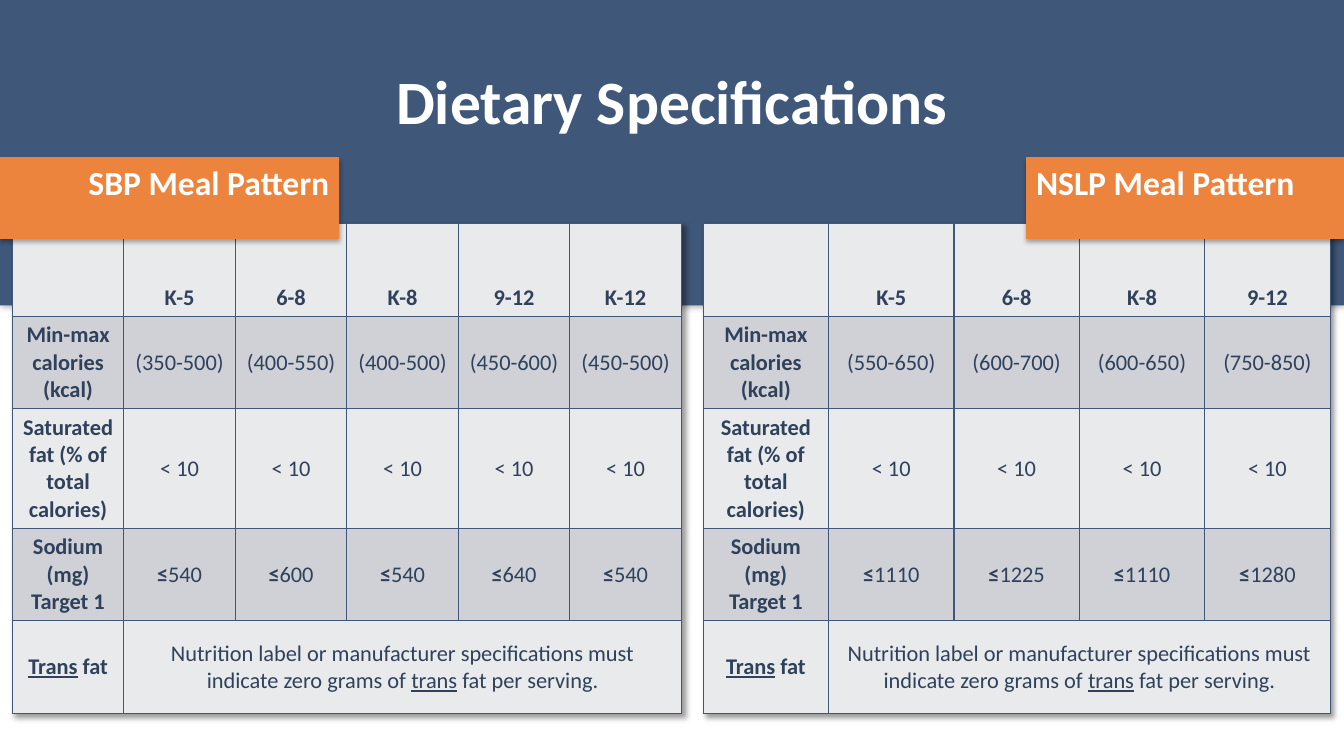
from lxml import etree
from pptx import Presentation
from pptx.dml.color import RGBColor
from pptx.enum import shapes, text
from pptx.oxml import ns
from pptx.util import Cm, Pt

FONT = "Calibri"
NAVY, ORANGE, WHITE, INK = "3F5779", "EC843E", "FFFFFF", "2F415B"
BAND_FILLS = ["E8EAEC", "CFD1D7"]
ROW_HEIGHTS = [2.33, 2.33, 3.0, 2.33, 2.33]
SLIDE_WIDTH = 33.87


def colour(value):
    return RGBColor.from_string(value)


def style(font, size, value, bold=None):
    font.name, font.size, font.bold = FONT, Pt(size), bold
    font.color.rgb = colour(value)


def child(parent, tag, **attributes):
    return etree.SubElement(parent, ns.qn(tag), {k: str(v) for k, v in attributes.items()})


def add_shadow(effects, opacity, blur, distance, degrees):
    shadow = child(effects, "a:outerShdw", blurRad=Pt(blur), dist=Pt(distance),
                   dir=degrees * 60000, algn="ctr", rotWithShape=0)
    child(child(shadow, "a:srgbClr", val="000000"), "a:alpha", val=opacity * 1000)


def add_panel(slide, left, top, width, height, fill, shadow):
    panel = slide.shapes.add_shape(shapes.MSO_SHAPE.RECTANGLE,
                                   Cm(left), Cm(top), Cm(width), Cm(height))
    panel.fill.solid()
    panel.fill.fore_color.rgb = colour(fill)
    panel.line.fill.background()
    panel.shadow.inherit = False
    add_shadow(panel.element.spPr.find(ns.qn("a:effectLst")), *shadow)
    return panel


def add_tab(slide, left, width, label, align):
    tab = add_panel(slide, left, 3.96, width, 2.06, ORANGE, (32, 3.5, 2.2, 90))
    frame = tab.text_frame
    frame.word_wrap = True
    frame.vertical_anchor = text.MSO_ANCHOR.TOP
    line = frame.paragraphs[0]
    line.text, line.alignment = label, align
    style(line.font, 24, WHITE, True)


def set_title(slide, wording, backdrop):
    title = slide.shapes.title
    title.element.addprevious(backdrop.element)
    title.left, title.top, title.width, title.height = Cm(9.73), Cm(1.45), Cm(24.1), Cm(2.13)
    title.text_frame.text = wording
    title.text_frame.vertical_anchor = text.MSO_ANCHOR.MIDDLE
    line = title.text_frame.paragraphs[0]
    line.alignment = text.PP_ALIGN.LEFT
    style(line.font, 44, WHITE, True)


def split_runs(line, bold):
    """Yield (wording, bold, underlined): _x_ is underlined, a leading ≤ is bold."""
    if line.startswith("≤"):
        yield "≤", True, False
        line = line[1:]
    for index, part in enumerate(line.split("_")):
        if part:
            yield part, bold, index % 2 == 1


def fill_cell(cell, wording, bold, fill, anchor):
    # Borders come before the fill in the cell properties
    properties = cell._tc.get_or_add_tcPr()
    for side in ("a:lnL", "a:lnR", "a:lnT", "a:lnB"):
        border = child(properties, side, w=Pt(1))
        child(child(border, "a:solidFill"), "a:srgbClr", val=NAVY)
    cell.fill.solid()
    cell.fill.fore_color.rgb = colour(fill)
    cell.vertical_anchor = anchor
    if not wording:
        return
    frame = cell.text_frame
    for number, line in enumerate(wording.split("\n")):
        paragraph = frame.add_paragraph() if number else frame.paragraphs[0]
        paragraph.alignment = text.PP_ALIGN.CENTER
        runs = list(split_runs(line, bold))
        same_weight = len({weight for _, weight, _ in runs}) == 1
        style(paragraph.font, 16, INK, bold if same_weight else None)
        for words, weight, underlined in runs:
            run = paragraph.add_run()
            run.text = words
            if not same_weight:
                run.font.bold = weight
            if underlined:
                run.font.underline = True


def add_meal_table(slide, left, width, grades, calories, sodium):
    rows = [
        ["", *grades],
        ["Min-max calories (kcal)", *(f"({span})" for span in calories)],
        ["Saturated fat (% of total calories)", *["< 10"] * len(grades)],
        ["Sodium (mg)\nTarget 1", *(f"≤{limit}" for limit in sodium)],
        ["_Trans_ fat", "Nutrition label or manufacturer specifications must "
         "indicate zero grams of _trans_ fat per serving.", *[""] * (len(grades) - 1)],
    ]
    columns = len(grades) + 1
    frame = slide.shapes.add_table(len(rows), columns, Cm(left), Cm(5.64),
                                   Cm(width), Cm(sum(ROW_HEIGHTS)))
    table = frame.table
    effects = etree.Element(ns.qn("a:effectLst"))
    add_shadow(effects, 40, 4, 3, 45)
    table._tbl.tblPr.insert(0, effects)
    for column in table.columns:
        column.width = Cm(width / columns)
    for r, (height, row) in enumerate(zip(ROW_HEIGHTS, rows)):
        table.rows[r].height = Cm(height)
        anchor = text.MSO_ANCHOR.MIDDLE if r else text.MSO_ANCHOR.BOTTOM
        for c, wording in enumerate(row):
            fill_cell(table.cell(r, c), wording, r == 0 or c == 0, BAND_FILLS[r % 2], anchor)
    last = len(rows) - 1
    table.cell(last, 1).merge(table.cell(last, columns - 1))


def main():
    deck = Presentation()
    deck.slide_width, deck.slide_height = Cm(SLIDE_WIDTH), Cm(19.05)
    slide = deck.slides.add_slide(deck.slide_layouts[5])

    # Heading band and title
    heading_band = add_panel(slide, 0, 0, SLIDE_WIDTH, 7.7, NAVY, (40, 5, 0, 0))
    set_title(slide, "Dietary Specifications", heading_band)

    # Breakfast and lunch tables
    add_meal_table(slide, 0.31, 16.86, ["K-5", "6-8", "K-8", "9-12", "K-12"],
                   ["350-500", "400-550", "400-500", "450-600", "450-500"],
                   [540, 600, 540, 640, 540])
    add_meal_table(slide, 17.72, 15.8, ["K-5", "6-8", "K-8", "9-12"],
                   ["550-650", "600-700", "600-650", "750-850"],
                   [1110, 1225, 1110, 1280])

    # Tabs naming the two patterns
    add_tab(slide, 25.86, SLIDE_WIDTH - 25.86, "NSLP Meal Pattern", text.PP_ALIGN.LEFT)
    add_tab(slide, 0, 8.55, "SBP Meal Pattern", text.PP_ALIGN.RIGHT)

    deck.save("out.pptx")


if __name__ == "__main__":
    main()
